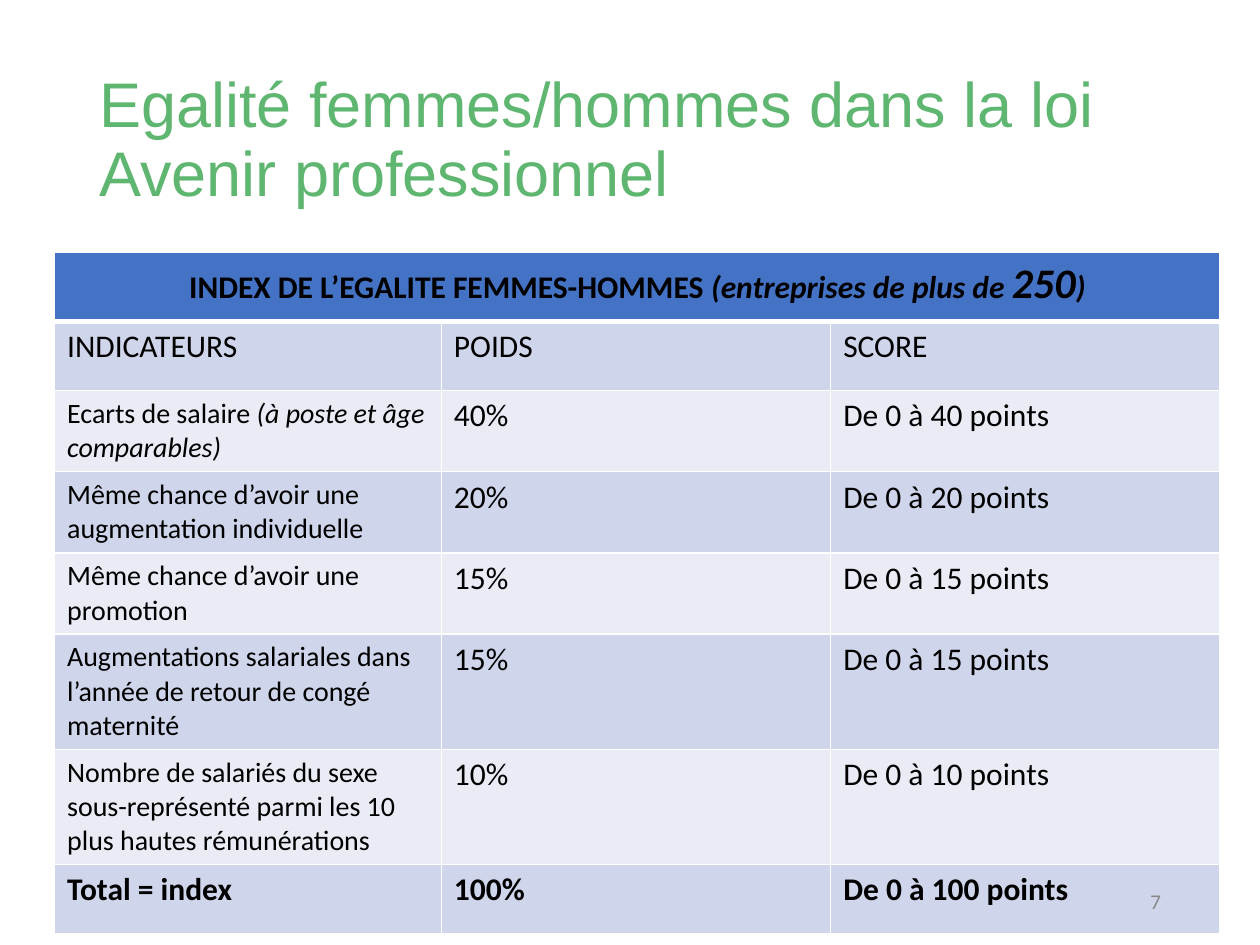
import dataclasses

import pptx
import pptx.dml.color
import pptx.enum.text
import pptx.oxml
import pptx.oxml.ns
import pptx.util

Pt = pptx.util.Pt
ALIGN = pptx.enum.text.PP_ALIGN
ANCHOR = pptx.enum.text.MSO_ANCHOR


@dataclasses.dataclass(frozen=True)
class Theme:
    title_font: str = "Arial"
    body_font: str = "Calibri"
    title_size: int = 36
    emphasis_size: int = 24
    body_size: int = 18
    label_size: int = 16
    number_size: int = 12
    title_color: str = "5FB670"
    text_color: str = "000000"
    number_color: str = "898989"
    header_fill: str = "4472C4"
    band_fills: tuple = ("CFD5EA", "E9EBF5")
    border_color: str = "FFFFFF"


def rgb(value):
    return pptx.dml.color.RGBColor.from_string(value)


class SlideBuilder:
    def __init__(self, slide, theme):
        self.slide = slide
        self.theme = theme

    def style(self, run, size, color, font=None, bold=False, italic=False):
        run.font.name = font or self.theme.body_font
        run.font.size = Pt(size)
        run.font.color.rgb = rgb(color)
        run.font.bold = bold
        run.font.italic = italic

    def title(self, text, left, top, width, height):
        heading = self.slide.shapes.title
        heading.left, heading.top = Pt(left), Pt(top)
        heading.width, heading.height = Pt(width), Pt(height)
        frame = heading.text_frame
        frame.text = text
        frame.auto_size = pptx.enum.text.MSO_AUTO_SIZE.NONE
        frame.vertical_anchor = ANCHOR.MIDDLE
        paragraph = frame.paragraphs[0]
        paragraph.alignment = ALIGN.LEFT
        paragraph.line_spacing = 0.9
        self.style(paragraph.runs[0], self.theme.title_size,
                   self.theme.title_color, self.theme.title_font)

    def page_number(self, text, left, top, width, height):
        number = self.slide.shapes.add_textbox(Pt(left), Pt(top), Pt(width), Pt(height))
        frame = number.text_frame
        frame.word_wrap = True
        frame.vertical_anchor = ANCHOR.MIDDLE
        frame.text = text
        frame.paragraphs[0].alignment = ALIGN.RIGHT
        self.style(frame.paragraphs[0].runs[0], self.theme.number_size,
                   self.theme.number_color)

    def borders(self, cell, **widths):
        """Draw the four cell edges; widths are points keyed by L, R, T or B."""
        properties = cell._tc.get_or_add_tcPr()
        for position, side in enumerate("LRTB"):
            width = Pt(widths.get(side, 1))
            properties.insert(position, pptx.oxml.parse_xml(
                f'<a:ln{side} {pptx.oxml.ns.nsdecls("a")} w="{width}"><a:solidFill>'
                f'<a:srgbClr val="{self.theme.border_color}"/></a:solidFill></a:ln{side}>'))

    def cell(self, cell, pieces, fill):
        """Fill a cell with pieces, each a pair of text and font options."""
        cell.fill.solid()
        cell.fill.fore_color.rgb = rgb(fill)
        paragraph = cell.text_frame.paragraphs[0]
        for text, options in pieces:
            run = paragraph.add_run()
            run.text = text
            self.style(run, **{"size": self.theme.body_size,
                               "color": self.theme.text_color, **options})

    def table(self, header, rows, left, top, column_widths, row_height):
        row_count = len(rows) + 1
        table = self.slide.shapes.add_table(
            row_count, len(column_widths), Pt(left), Pt(top),
            Pt(sum(column_widths)), Pt(row_height * row_count)).table
        for column, width in zip(table.columns, column_widths):
            column.width = Pt(width)
        for row in table.rows:
            row.height = Pt(row_height)

        banner = table.cell(0, 0)
        banner.merge(table.cell(0, len(column_widths) - 1))
        self.cell(banner, header, self.theme.header_fill)
        banner.text_frame.paragraphs[0].alignment = ALIGN.CENTER
        for column in range(len(column_widths)):
            self.borders(table.cell(0, column), B=3)

        for index, row in enumerate(rows):
            fill = self.theme.band_fills[index % 2]
            for column, pieces in enumerate(row):
                cell = table.cell(index + 1, column)
                self.cell(cell, pieces, fill)
                self.borders(cell, T=1 if index else 3)


def main():
    theme = Theme()
    presentation = pptx.Presentation()
    presentation.slide_width, presentation.slide_height = Pt(720), Pt(540)
    builder = SlideBuilder(
        presentation.slides.add_slide(presentation.slide_layouts[5]), theme)

    builder.title("Egalité femmes/hommes dans la loi Avenir professionnel",
                  49.5, 28.75, 621, 104.4)

    bold, bold_italic = {"bold": True}, {"bold": True, "italic": True}
    header = [
        ("INDEX DE L’EGALITE FEMMES-HOMMES ", bold),
        ("(entreprises de plus de ", bold_italic),
        ("250", {**bold_italic, "size": theme.emphasis_size}),
        (")", bold_italic),
    ]
    indicators = [
        ("Ecarts de salaire ", "(à poste et âge comparables)", 40),
        ("Même chance d’avoir une augmentation individuelle", "", 20),
        ("Même chance d’avoir une promotion", "", 15),
        ("Augmentations salariales dans l’année de retour de congé maternité", "", 15),
        ("Nombre de salariés du sexe sous-représenté parmi les 10 plus hautes "
         "rémunérations", "", 10),
    ]
    label = {"size": theme.label_size}
    rows = [[[(text, {})] for text in ("INDICATEURS", "POIDS", "SCORE")]]
    for name, remark, weight in indicators:
        pieces = [(name, label)]
        if remark:
            pieces.append((remark, {**label, "italic": True}))
        rows.append([pieces, [(f"{weight}%", {})], [(f"De 0 à {weight} points", {})]])
    rows.append([[(text, bold)] for text in ("Total = index", "100%", "De 0 à 100 points")])

    builder.table(header, rows, 31.2, 144, (221, 222.5, 222.5), 39.6)
    builder.page_number("7", 508.5, 500.5, 162, 28.75)
    presentation.save("out.pptx")


if __name__ == "__main__":
    main()
